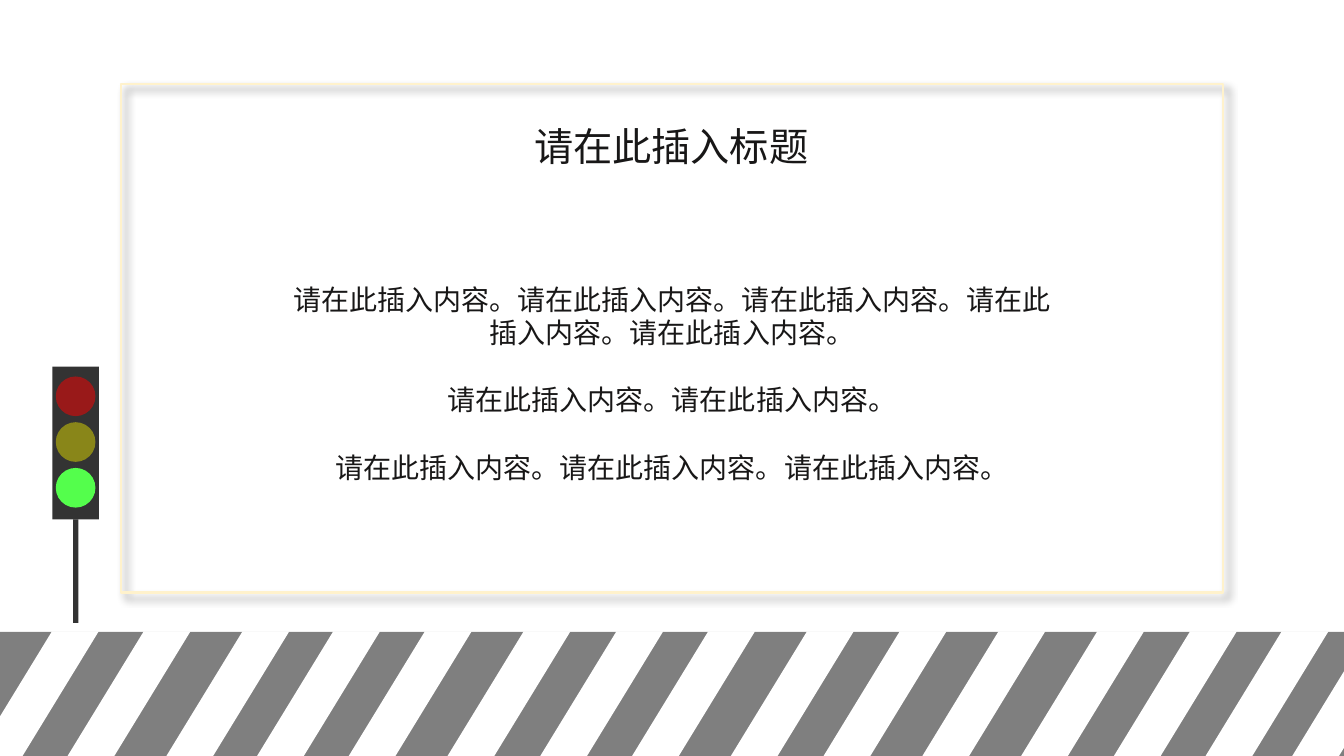
from lxml.etree import SubElement
from pptx import Presentation
from pptx.dml.color import RGBColor
from pptx.enum.shapes import MSO_SHAPE
from pptx.enum.text import MSO_ANCHOR, MSO_AUTO_SIZE, PP_ALIGN
from pptx.oxml.ns import qn
from pptx.util import Inches, Pt

BLACK = RGBColor(0x00, 0x00, 0x00)
WHITE = RGBColor(0xFF, 0xFF, 0xFF)
INK = RGBColor(0x18, 0x17, 0x17)
CREAM = RGBColor(0xFF, 0xF2, 0xCC)
RED = RGBColor(0xFF, 0x00, 0x00)
YELLOW = RGBColor(0xDF, 0xDA, 0x00)
GREEN = RGBColor(0x54, 0xFE, 0x4C)
FONT = "Noto Sans CJK SC"

# The slide is a grid of 100 columns by 100 rows
WIDTH, HEIGHT = Inches(13.33), Inches(7.5)
COLUMN, ROW = WIDTH / 100, HEIGHT / 100

STRIPE_COLUMNS = (-1.8, 5.03, 12.38, 19.13, 25.95, 33.3, 40.2, 47.03,
                  54.38, 61.28, 68.63, 75.98, 82.88, 89.7, 96.15)
SENTENCE = "请在此插入内容。"
SENTENCES_PER_PARAGRAPH = (5, 2, 3)


def cells(column, row, columns, rows):
    """Turn grid cells into left, top, width and height."""
    return (round(column * COLUMN), round(row * ROW),
            round(columns * COLUMN), round(rows * ROW))


def add_figure(slide, preset, area, color, opacity=100):
    """Add a borderless shape with a solid, possibly translucent fill."""
    figure = slide.shapes.add_shape(preset, *cells(*area))
    figure.shadow.inherit = False
    figure.line.fill.background()
    figure.fill.solid()
    figure.fill.fore_color.rgb = color
    if opacity < 100:
        tint = figure.fill._xPr.find(qn("a:solidFill"))[0]
        SubElement(tint, qn("a:alpha"), val=str(opacity * 1000))
    return figure


def add_frame(slide, area):
    """Add the hollow content frame with its soft outer shadow."""
    frame = slide.shapes.add_shape(MSO_SHAPE.RECTANGLE, *cells(*area))
    frame.fill.background()
    frame.line.color.rgb = CREAM
    frame.line.width = Pt(2)
    frame.shadow.inherit = False
    effects = frame._element.spPr.find(qn("a:effectLst"))
    shadow = SubElement(effects, qn("a:outerShdw"), blurRad=str(Pt(6)),
                        dist=str(Pt(5)), dir=str(45 * 60000),
                        algn="tl", rotWithShape="0")
    tint = SubElement(shadow, qn("a:srgbClr"), val=str(BLACK))
    SubElement(tint, qn("a:alpha"), val="40000")


def fill_placeholder(placeholder, area, paragraphs, size):
    """Move a placeholder and set its centred, unbulleted text."""
    (placeholder.left, placeholder.top,
     placeholder.width, placeholder.height) = cells(*area)
    frame = placeholder.text_frame
    frame.text = "\n".join(paragraphs)
    frame.word_wrap = True
    frame.auto_size = MSO_AUTO_SIZE.NONE
    frame.vertical_anchor = MSO_ANCHOR.MIDDLE
    for paragraph in frame.paragraphs:
        paragraph.alignment = PP_ALIGN.CENTER
        paragraph.space_before = Pt(0)
        font = paragraph.font
        font.name, font.size, font.color.rgb = FONT, Pt(size), INK
        properties = paragraph._p.get_or_add_pPr()
        properties.set("marL", "0")
        properties.set("indent", "0")
        defaults = properties.find(qn("a:defRPr"))
        defaults.addprevious(SubElement(properties, qn("a:buNone")))
        east_asian = SubElement(defaults, qn("a:ea"), typeface=FONT)
        defaults.find(qn("a:latin")).addnext(east_asian)
    return frame.paragraphs


def add_crossing(slide):
    """Add the grey road with slanted white stripes."""
    add_figure(slide, MSO_SHAPE.RECTANGLE, (0, 83.6, 100, 16.4), BLACK, 50)
    for column in STRIPE_COLUMNS:
        stripe = add_figure(slide, MSO_SHAPE.PARALLELOGRAM,
                            (column, 83.5, 9.15, 16.5), WHITE)
        stripe.adjustments[0] = 0.62


def add_traffic_light(slide):
    """Add the pole, the housing and three evenly spaced lamps."""
    add_figure(slide, MSO_SHAPE.RECTANGLE, (5.45, 68.7, 0.38, 13.7), BLACK, 80)
    add_figure(slide, MSO_SHAPE.RECTANGLE, (3.9, 48.5, 3.47, 20.2), BLACK, 80)
    for place, (color, opacity) in enumerate(
            ((RED, 50), (YELLOW, 50), (GREEN, 100))):
        add_figure(slide, MSO_SHAPE.OVAL,
                   (4.15, 49.8 + 6.05 * place, 2.95, 5.25), color, opacity)


def main():
    deck = Presentation()
    deck.slide_width, deck.slide_height = WIDTH, HEIGHT
    slide = deck.slides.add_slide(deck.slide_layouts[1])

    # Framed title and content
    add_frame(slide, (9, 11.1, 82, 67.3))
    fill_placeholder(slide.shapes.title, (37.75, 15.5, 24.4, 7.6),
                     ["请在此插入标题"], 28)
    content = fill_placeholder(
        slide.placeholders[1], (20.35, 36.5, 59.3, 28.3),
        [SENTENCE * count for count in SENTENCES_PER_PARAGRAPH], 20)
    for paragraph in content:
        paragraph.line_spacing = Pt(24)
    for paragraph in content[1:]:
        paragraph.space_before = Pt(24)

    # Street scene
    add_crossing(slide)
    add_traffic_light(slide)
    deck.save("out.pptx")


if __name__ == "__main__":
    main()
